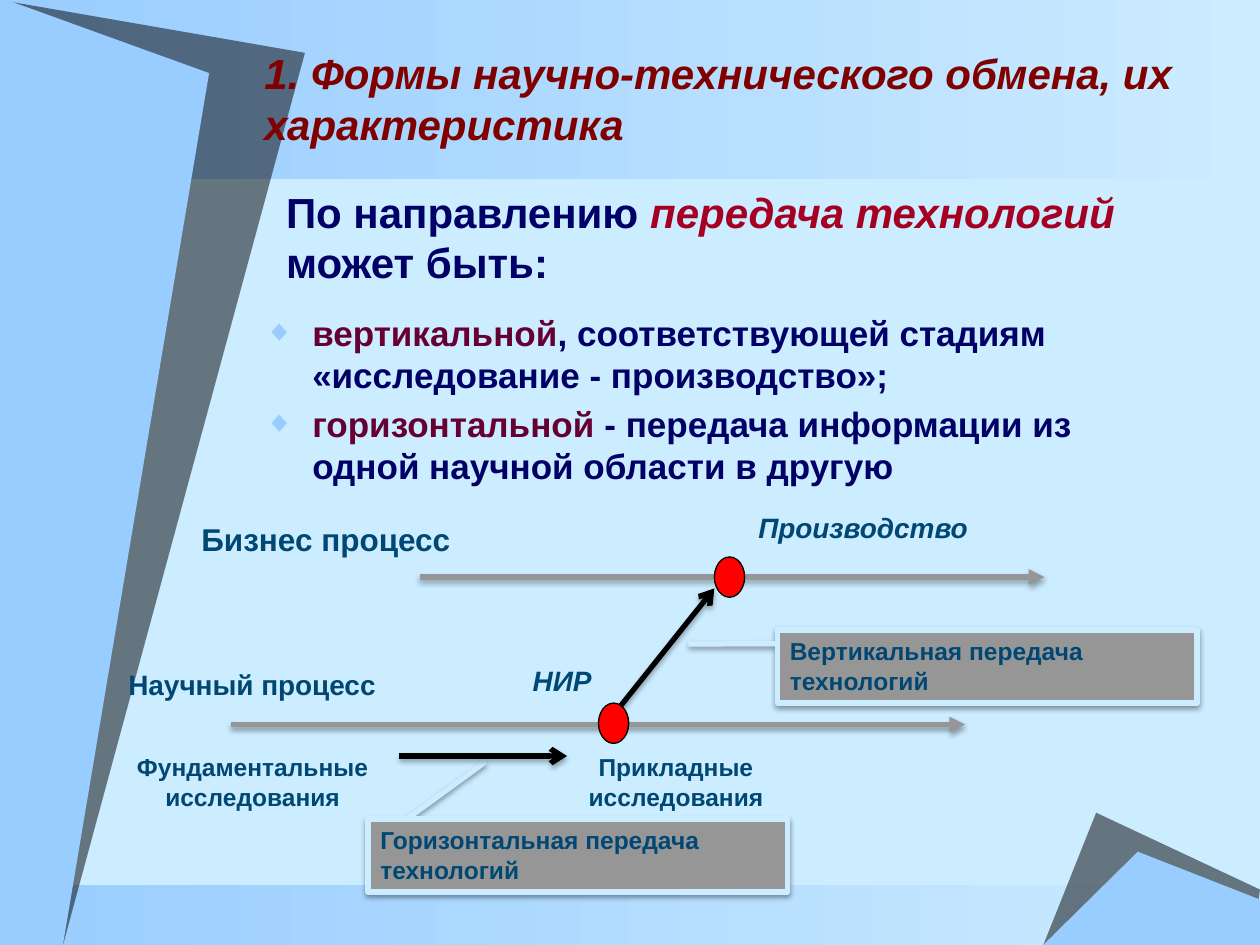
"""Build the slide on forms of scientific and technical exchange."""
import pptx
import pptx.dml.color
import pptx.enum.shapes
import pptx.enum.text
import pptx.oxml
import pptx.oxml.ns
import pptx.util

Inches, Pt = pptx.util.Inches, pptx.util.Pt
RGB = pptx.dml.color.RGBColor
SHAPE = pptx.enum.shapes.MSO_SHAPE
ALIGN = pptx.enum.text.PP_ALIGN
ANCHOR = pptx.enum.text.MSO_ANCHOR
qn = pptx.oxml.ns.qn
NS = pptx.oxml.ns.nsdecls("a")

PALE, SKY = RGB(0xCC, 0xEC, 0xFF), RGB(0x99, 0xCC, 0xFF)
BLACK, GREY, RED = RGB(0, 0, 0), RGB(0x96, 0x96, 0x96), RGB(0xFF, 0, 0)
NAVY, CRIMSON = RGB(0, 0, 0x66), RGB(0xA5, 0, 0x21)
PLUM, MAROON, TEAL = RGB(0x66, 0, 0x33), RGB(0x80, 0, 0), RGB(0, 0x48, 0x73)

TITLE = [("По направлению ", NAVY, False), ("передача технологий", CRIMSON, True),
         (" может быть:", NAVY, False)]
HEADING = [("1. Формы научно-технического обмена, их характеристика", MAROON, True)]
BULLETS = [
    [("вертикальной", PLUM, False),
     (", соответствующей стадиям «исследование - производство»;", NAVY, False)],
    [("горизонтальной ", PLUM, False),
     ("- передача информации из одной научной области в другую", NAVY, False)],
]
LABELS = [
    ("Научный процесс", (0.92, 5.25, 3.15, 0.37), 16, False, ALIGN.LEFT),
    ("Бизнес процесс", (1.5, 4.08, 2.4, 0.4), 18, False, ALIGN.LEFT),
    ("Фундаментальные исследования", (0.83, 5.92, 2.35, 0.57), 14, False, ALIGN.CENTER),
    ("НИР", (4.13, 5.22, 1.1, 0.37), 16, True, ALIGN.LEFT),
    ("Прикладные исследования", (4.42, 5.92, 1.89, 0.57), 14, False, ALIGN.CENTER),
    ("Производство", (5.92, 4, 2.08, 0.37), 16, True, ALIGN.LEFT),
]
BANDS = [(0, 7.02, 10, 0.48), (0, 0, 10, 1.42)]
CORNERS = [
    [[(8.7, 6.45), (10, 7.06), (9.94, 7.5), (8.28, 7.5)],
     [(8.28, 7.5), (9.03, 6.76), (10, 7.14), (10, 7.5)]],
    [[(0, 0), (2.42, 0.42), (0.5, 7.5), (0, 7.5)],
     [(0, -0.02), (1.66, 0.58), (0.5, 7.5), (0, 7.5)]],
]
AXES = [(1.83, 5.75, 7.66, 5.75), (3.33, 4.58, 8.29, 4.58)]
NODES = [(4.75, 5.58, 0.24, 0.32), (5.67, 4.42, 0.24, 0.32)]
TRANSFERS = [
    ("Вертикальная передача технологий", (6.17, 5, 3.33, 0.58),
     (0.188, -0.004, 0.192, -0.212), (4.92, 5.61, 5.67, 4.67)),
    ("Горизонтальная передача технологий", (2.92, 6.5, 3.33, 0.58),
     (-0.008, 0.095, -0.785, 0.281), (3.17, 6, 4.5, 6)),
]


def inches(values):
    return [Inches(v) for v in values]


def add_runs(p, runs, size):
    for text, color, italic in runs:
        r = p.add_run()
        r.text = text
        font = {"name": "Arial", "size": Pt(size), "bold": True, "italic": italic}
        for key, value in font.items():
            setattr(r.font, key, value)
        r.font.color.rgb = color


def add_text(s, box, paragraphs, size, align=ALIGN.LEFT):
    sp = s.shapes.add_textbox(*inches(box))
    tf = sp.text_frame
    tf.word_wrap = True
    for i, runs in enumerate(paragraphs):
        p = tf.add_paragraph() if i else tf.paragraphs[0]
        p.alignment = align
        add_runs(p, runs, size)
    return tf


def add_shadow(sp, alpha, blur, distance):
    spPr = sp._element.spPr
    effects = spPr.find(qn("a:effectLst"))
    if effects is None:
        effects = pptx.oxml.parse_xml(f"<a:effectLst {NS}/>")
        spPr.append(effects)
    effects.append(pptx.oxml.parse_xml(
        f'<a:outerShdw {NS} blurRad="{Pt(blur)}" dist="{Pt(distance)}" dir="5400000" '
        f'rotWithShape="0"><a:srgbClr val="000000"><a:alpha val="{alpha * 1000}"/>'
        '</a:srgbClr></a:outerShdw>'))


def style(sp, fill, line=None, width=0):
    sp.shadow.inherit = False
    sp.fill.solid()
    sp.fill.fore_color.rgb = fill
    if line is None:
        sp.line.fill.background()
    else:
        sp.line.color.rgb = line
        sp.line.width = Pt(width)


def add_band(s, box):
    sp = s.shapes.add_shape(SHAPE.RECTANGLE, *inches(box))
    style(sp, SKY)
    sp.fill.gradient()
    sp.fill.gradient_angle = 0
    for stop, position, color in zip(sp.fill.gradient_stops, (0, 1), (SKY, PALE)):
        stop.position = position
        stop.color.rgb = color


def add_corner(s, points, color, alpha):
    start, *rest = [inches(point) for point in points]
    builder = s.shapes.build_freeform(*start)
    builder.add_line_segments(rest, close=True)
    sp = builder.convert_to_shape()
    style(sp, color)
    if alpha < 100:
        clr = sp._element.spPr.find(qn("a:solidFill"))[0]
        clr.append(pptx.oxml.parse_xml(f'<a:alpha {NS} val="{alpha * 1000}"/>'))


def add_arrow(s, ends, color, head):
    sp = s.shapes.add_connector(pptx.enum.shapes.MSO_CONNECTOR.STRAIGHT, *inches(ends))
    sp.line.color.rgb = color
    sp.line.width = Pt(3)
    sp.line._get_or_add_ln().append(pptx.oxml.parse_xml(f'<a:tailEnd {NS} type="{head}"/>'))
    add_shadow(sp, 35, 3.1, 1.8)


def add_callout(s, text, box, adjustments):
    sp = s.shapes.add_shape(SHAPE.LINE_CALLOUT_1, *inches(box))
    for i, value in enumerate(adjustments):
        sp.adjustments[i] = value
    style(sp, GREY, PALE, 3)
    add_shadow(sp, 38, 3.1, 1.6)
    tf = sp.text_frame
    tf.word_wrap = True
    tf.vertical_anchor = ANCHOR.TOP
    tf.paragraphs[0].alignment = ALIGN.LEFT
    add_runs(tf.paragraphs[0], [(text, TEAL, False)], 14)


def add_bullets(s):
    tf = add_text(s, (2, 2.42, 7.41, 1.58), BULLETS, 20)
    for p in tf.paragraphs:
        p.space_after = Pt(4)
        pPr = p._p.get_or_add_pPr()
        pPr.set("marL", str(Inches(0.38)))
        pPr.set("indent", str(-Inches(0.38)))
        for xml in (f'<a:buClr {NS}><a:srgbClr val="{SKY}"/></a:buClr>',
                    f'<a:buSzPct {NS} val="85000"/>',
                    f'<a:buFont {NS} typeface="Arial"/>',
                    f'<a:buChar {NS} char="◆"/>'):
            pPr.append(pptx.oxml.parse_xml(xml))


def set_title(s):
    sp = s.shapes.title
    place = zip(("left", "top", "width", "height"), inches((2.17, 1.58, 7.51, 0.75)))
    for key, value in place:
        setattr(sp, key, value)
    tf = sp.text_frame
    frame = {"word_wrap": True, "auto_size": pptx.enum.text.MSO_AUTO_SIZE.NONE,
             "vertical_anchor": ANCHOR.BOTTOM}
    for key, value in frame.items():
        setattr(tf, key, value)
    tf.paragraphs[0].alignment = ALIGN.LEFT
    add_runs(tf.paragraphs[0], TITLE, 24)


def main():
    prs = pptx.Presentation()
    prs.slide_width, prs.slide_height = inches((10, 7.5))
    s = prs.slides.add_slide(prs.slide_layouts[5])
    s.background.fill.solid()
    s.background.fill.fore_color.rgb = PALE
    for band, (shade, front) in zip(BANDS, CORNERS):
        add_band(s, band)
        add_corner(s, shade, BLACK, 50)
        add_corner(s, front, SKY, 100)
    set_title(s)
    add_bullets(s)
    add_text(s, (2, 0.33, 7.58, 0.91), [HEADING], 24)
    for ends in AXES:
        add_arrow(s, ends, GREY, "triangle")
    for text, box, size, italic, align in LABELS:
        add_text(s, box, [[(text, TEAL, italic)]], size, align)
    for text, box, adjustments, ends in TRANSFERS:
        add_callout(s, text, box, adjustments)
        add_arrow(s, ends, BLACK, "arrow")
    for box in NODES:
        style(s.shapes.add_shape(SHAPE.OVAL, *inches(box)), RED, BLACK, 0.75)
    prs.save("out.pptx")


if __name__ == "__main__":
    main()
